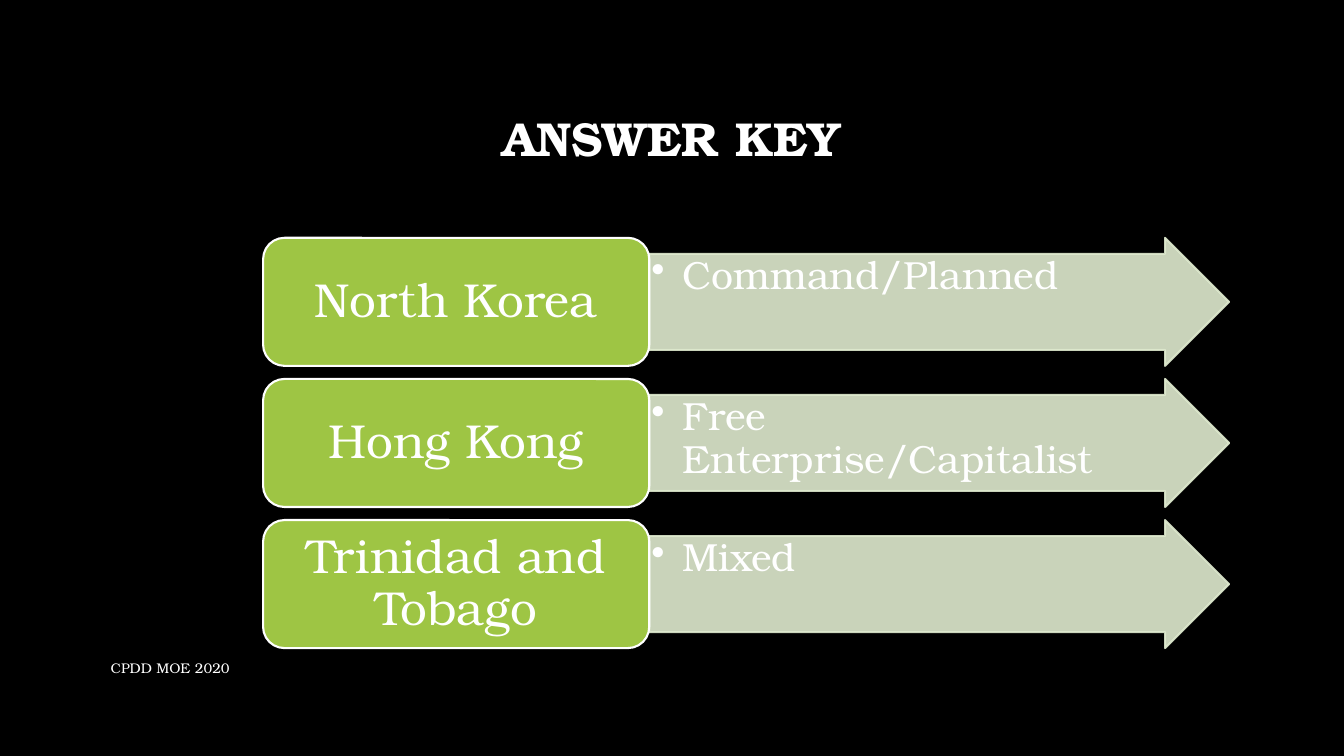
from lxml import etree
from pptx import Presentation
from pptx import util as u
from pptx.dml import color
from pptx.enum import shapes, text
from pptx.oxml import ns

PX = 9144
FONT = "TeX Gyre Bonum"
WHITE, BLACK, GREEN, PALE = "FFFFFF", "000000", "9EC544", "DFEACF"
ANSWERS = [
    ("North Korea", "Command/Planned"),
    ("Hong Kong", "Free Enterprise/Capitalist"),
    ("Trinidad and Tobago", "Mixed"),
]


def px(length):
    return u.Emu(length * PX)


def rgb(value):
    return color.RGBColor.from_string(value)


def set_all(target, values):
    for name, value in values.items():
        setattr(target, name, value)


def write(shape, words, size, insets, bold=False, spacing=0.9,
          align=text.PP_ALIGN.CENTER, anchor=text.MSO_ANCHOR.MIDDLE):
    frame = shape.text_frame
    sides = ("margin_left", "margin_top", "margin_right", "margin_bottom")
    set_all(frame, dict(zip(sides, map(px, insets)),
                        word_wrap=True, vertical_anchor=anchor))
    paragraph = frame.paragraphs[0]
    set_all(paragraph, {"alignment": align, "line_spacing": spacing})
    run = paragraph.add_run()
    run.text = words
    set_all(run.font, {"name": FONT, "size": u.Pt(size), "bold": bold})
    run.font.color.rgb = rgb(WHITE)
    return paragraph


def add_bullet(paragraph, indent):
    properties = paragraph._p.get_or_add_pPr()
    properties.set("marL", str(px(indent)))
    properties.set("indent", str(px(-indent)))
    etree.SubElement(properties, ns.qn("a:buChar"), char="•")


def add_block(slide, kind, box, fill, line, opacity=100):
    shape = slide.shapes.add_shape(kind, *map(px, box))
    shape.shadow.inherit = False
    shape.fill.solid()
    shape.fill.fore_color.rgb = rgb(fill)
    shape.line.color.rgb = rgb(line)
    shape.line.width = u.Pt(1.5)
    if opacity < 100:
        for tint in shape._element.spPr.iter(ns.qn("a:srgbClr")):
            etree.SubElement(tint, ns.qn("a:alpha"), val=str(opacity * 1000))
    return shape


def add_label(slide, box, words, size, **style):
    label = slide.shapes.add_textbox(*map(px, box))
    write(label, words, size, (10, 5, 10, 5), **style)


def add_answer(slide, box, country, system):
    left, top, width, height = box
    split = round(width * 0.4)
    arrow = add_block(slide, shapes.MSO_SHAPE.RIGHT_ARROW,
                      (left + split, top, width - split, height),
                      PALE, PALE, 90)
    arrow.adjustments[0] = 0.75
    arrow.adjustments[1] = 0.5
    paragraph = write(arrow, system, 28, (2, 2, 33, 2),
                      align=text.PP_ALIGN.LEFT, anchor=text.MSO_ANCHOR.TOP)
    add_bullet(paragraph, 31)
    card = add_block(slide, shapes.MSO_SHAPE.ROUNDED_RECTANGLE,
                     (left, top, split, height), GREEN, WHITE)
    write(card, country, 34, (14, 7, 14, 7))


def add_answers(slide, box, gap):
    left, top, width, height = box
    row = (height - gap * (len(ANSWERS) - 1)) // len(ANSWERS)
    for index, (country, system) in enumerate(ANSWERS):
        add_answer(slide, (left, top + index * (row + gap), width, row),
                   country, system)


def main():
    presentation = Presentation()
    set_all(presentation, {"slide_width": px(1333), "slide_height": px(750)})
    slide = presentation.slides.add_slide(presentation.slide_layouts[6])
    slide.background.fill.solid()
    slide.background.fill.fore_color.rgb = rgb(BLACK)
    add_label(slide, (100, 67, 1132, 145), "ANSWER KEY", 34, bold=True)
    add_label(slide, (100, 643, 730, 40), "CPDD MOE 2020", 10,
              spacing=1.0, align=text.PP_ALIGN.LEFT)
    add_answers(slide, (261, 236, 958, 407), 13)
    presentation.save("out.pptx")


if __name__ == "__main__":
    main()
